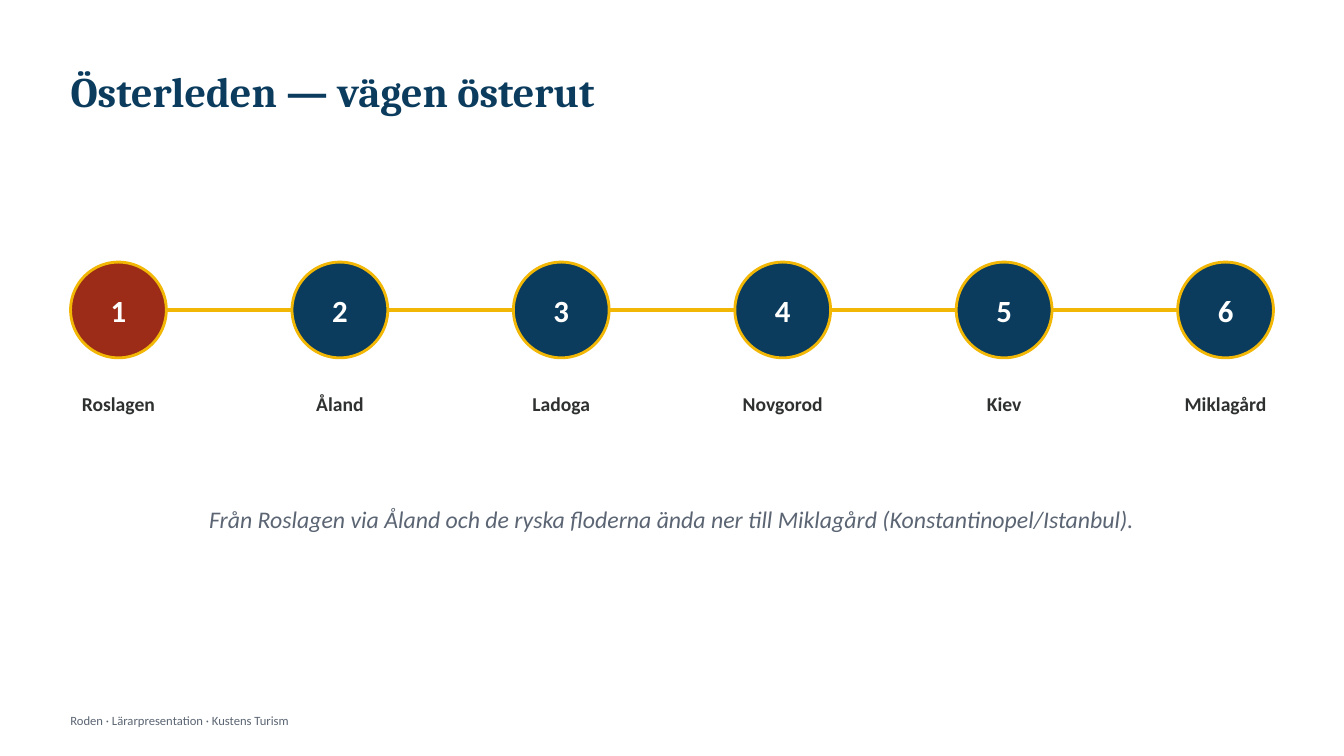
from pptx import Presentation
from pptx.dml.color import RGBColor
from pptx.enum.shapes import MSO_CONNECTOR as Connector, MSO_SHAPE as Shape
from pptx.enum.text import MSO_ANCHOR as Anchor, MSO_AUTO_SIZE as AutoSize, PP_ALIGN as Align
from pptx.oxml.ns import qn
from pptx.util import Pt
from lxml.etree import SubElement

SLIDE_WIDTH, SLIDE_HEIGHT = 960, 540
NAVY, RED, GOLD = "0B3C5D", "9C2C17", "F2B705"
INK, GREY, WHITE = "2F3030", "5B6573", "FFFFFF"

# Route layout
STOPS = ["Roslagen", "Åland", "Ladoga", "Novgorod", "Kiev", "Miklagård"]
MARGIN = 50.4
DIAMETER = 68.4
CIRCLE_TOP = 187.2
PITCH = (SLIDE_WIDTH - 2 * MARGIN - DIAMETER) / (len(STOPS) - 1)
LABEL_WIDTH = 147.6

# Text formats
TITLE = {"name": "Cambria", "size": 30, "bold": True, "color": NAVY}
NUMBER = {"name": "Calibri", "size": 22, "bold": True, "color": WHITE}
LABEL = {"name": "Calibri", "size": 14, "bold": True, "color": INK}
CAPTION = {"name": "Calibri", "size": 17, "italic": True, "color": GREY}
FOOTER = {"name": "Calibri", "size": 9, "color": GREY}


def rgb(color):
    return RGBColor.from_string(color)


def write(shape, text, formats, align=Align.LEFT):
    frame = shape.text_frame
    frame.text = text
    frame.word_wrap = True
    frame.auto_size = AutoSize.NONE
    frame.vertical_anchor = Anchor.MIDDLE
    paragraph = frame.paragraphs[0]
    paragraph.alignment = align
    font = paragraph.runs[0].font
    for key, value in formats.items():
        if key == "color":
            font.color.rgb = rgb(value)
        else:
            setattr(font, key, Pt(value) if key == "size" else value)


def add_title(slide, text, left, top, width, height):
    title = slide.shapes.title
    title.left, title.top, title.width, title.height = map(Pt, (left, top, width, height))
    write(title, text, TITLE)


def add_text(slide, text, left, top, width, height, formats, align=Align.LEFT):
    box = slide.shapes.add_textbox(*map(Pt, (left, top, width, height)))
    write(box, text, formats, align)


def add_link(slide, start, end, y):
    link = slide.shapes.add_connector(Connector.STRAIGHT, Pt(start), Pt(y), Pt(end), Pt(y))
    link.line.color.rgb = rgb(GOLD)
    link.line.width = Pt(2.5)
    SubElement(link._element.spPr, qn("a:effectLst"))


def add_stop(slide, number, name, left, fill):
    circle = slide.shapes.add_shape(
        Shape.OVAL, Pt(left), Pt(CIRCLE_TOP), Pt(DIAMETER), Pt(DIAMETER))
    circle.shadow.inherit = False
    circle.fill.solid()
    circle.fill.fore_color.rgb = rgb(fill)
    circle.line.color.rgb = rgb(GOLD)
    circle.line.width = Pt(2)
    write(circle, str(number), NUMBER, Align.CENTER)
    label_left = left + (DIAMETER - LABEL_WIDTH) / 2
    add_text(slide, name, label_left, 266.4, LABEL_WIDTH, 43.2, LABEL, Align.CENTER)


def main():
    presentation = Presentation()
    presentation.slide_width, presentation.slide_height = Pt(SLIDE_WIDTH), Pt(SLIDE_HEIGHT)
    slide = presentation.slides.add_slide(presentation.slide_layouts[5])
    add_title(slide, "Österleden — vägen österut", 43.2, 32.4, 873.6, 64.8)

    # Links between the stops
    lefts = [MARGIN + index * PITCH for index in range(len(STOPS))]
    for left, following in zip(lefts, lefts[1:]):
        add_link(slide, left + DIAMETER, following, CIRCLE_TOP + DIAMETER / 2)

    # Numbered stops, with the starting point in red
    for number, (name, left) in enumerate(zip(STOPS, lefts), 1):
        add_stop(slide, number, name, left, RED if number == 1 else NAVY)

    # Caption and footer
    add_text(slide, "Från Roslagen via Åland och de ryska floderna ända ner till "
             "Miklagård (Konstantinopel/Istanbul).",
             MARGIN, 345.6, SLIDE_WIDTH - 2 * MARGIN, 50.4, CAPTION, Align.CENTER)
    add_text(slide, "Roden · Lärarpresentation · Kustens Turism",
             43.2, 504, 576, 21.6, FOOTER)
    presentation.save("out.pptx")


if __name__ == "__main__":
    main()
